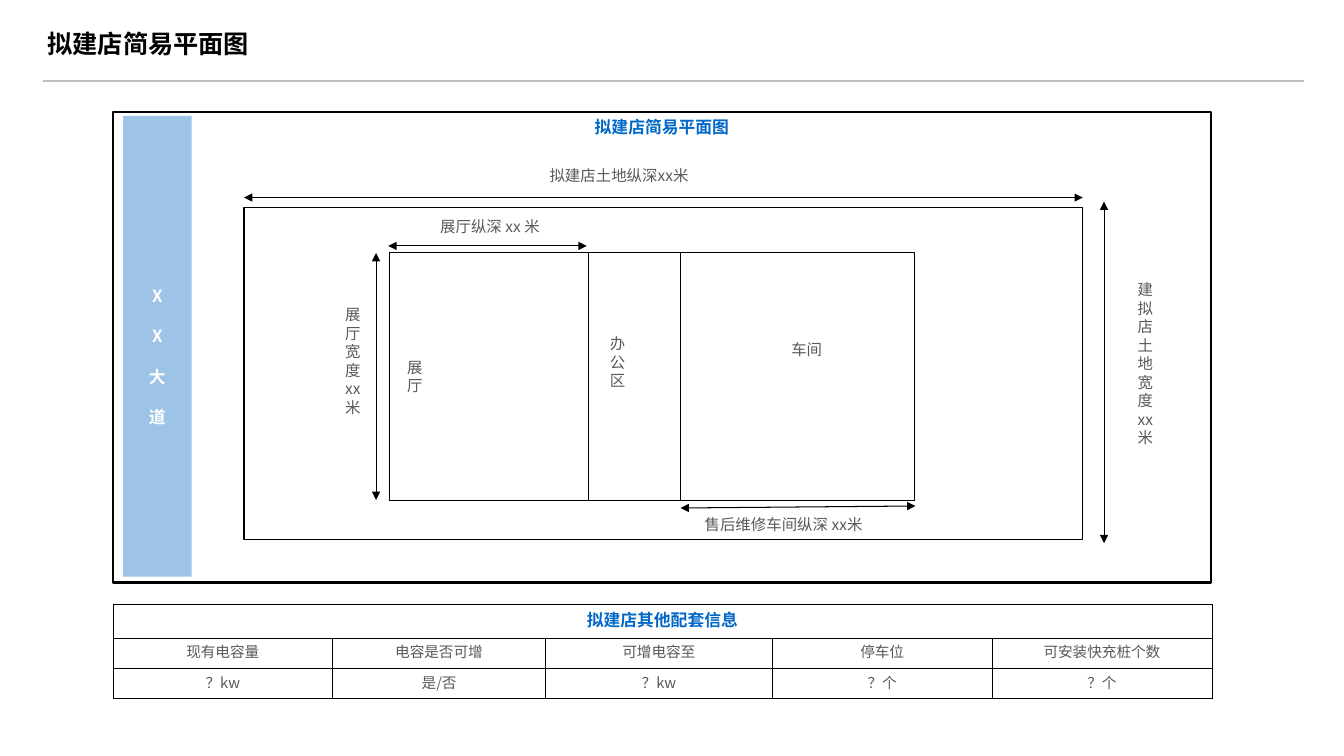
from lxml.etree import SubElement
from pptx import Presentation
from pptx.dml.color import RGBColor
from pptx.enum.shapes import MSO_CONNECTOR, MSO_SHAPE
from pptx.enum.text import MSO_ANCHOR, MSO_AUTO_SIZE, PP_ALIGN
from pptx.oxml.ns import qn
from pptx.util import Inches, Pt

FONT = "Noto Sans CJK SC"
BLACK = RGBColor(0x00, 0x00, 0x00)
WHITE = RGBColor(0xFF, 0xFF, 0xFF)
GREY = RGBColor(0x59, 0x59, 0x59)
RULE_GREY = RGBColor(0xBF, 0xBF, 0xBF)
BLUE = RGBColor(0x00, 0x69, 0xC8)
ROAD_BLUE = RGBColor(0x9D, 0xC3, 0xE6)

# Content: text, place (left, top, width, height), format
TITLE = "拟建店简易平面图"
TITLE_PLACE = (0.37, 0.23, 7.07, 0.4)
LABEL = {"size": Pt(11), "bold": False, "color": GREY}
HEADING = {"size": Pt(12), "bold": True, "color": BLUE}
ROAD_TEXT = {"size": Pt(12), "bold": True, "color": WHITE}
TABLE_TEXT = {"size": Pt(10.5), "bold": False, "color": GREY}
TITLE_TEXT = {"size": Pt(18), "bold": True, "color": BLACK}

PLAN = (1.12, 1.11, 10.89, 4.67)
ROAD = (1.22, 1.15, 0.68, 4.57)
ROOMS = [  # land, showroom with office, workshop
    (2.42, 2.06, 8.32, 3.29),
    (3.86, 2.51, 3.24, 2.46),
    (6.75, 2.51, 2.32, 2.46),
]
OFFICE_WALL = (5.84, 2.51, 5.84, 4.96)
CENTER, JUSTIFY = PP_ALIGN.CENTER, PP_ALIGN.JUSTIFY
LABELS = [  # lines, place, alignment, anchor, top inset
    (["拟建店土地纵深xx米"], (4.34, 1.6, 3.6, 0.3), CENTER, MSO_ANCHOR.TOP, 0.05),
    (["建拟店土地宽度xx", "米"], (11.12, 2.3, 0.48, 2.61), CENTER, MSO_ANCHOR.MIDDLE, 0.05),
    (["展厅宽度xx米"], (3.28, 2.98, 0.44, 1.51), CENTER, MSO_ANCHOR.TOP, 0.05),
    (["展厅纵深 xx 米"], (3.96, 2.11, 1.8, 0.33), CENTER, MSO_ANCHOR.TOP, 0.05),
    (["售后维修车间纵深 xx米"], (6.89, 5.06, 2.1, 0.41), JUSTIFY, MSO_ANCHOR.TOP, 0.05),
    (["办", "公", "区"], (5.95, 3.27, 0.77, 0.99), JUSTIFY, MSO_ANCHOR.TOP, 0.05),
    (["展", "厅"], (3.94, 3.5, 0.56, 0.65), JUSTIFY, MSO_ANCHOR.TOP, 0.05),
    (["车间"], (7.75, 3.14, 0.69, 1.03), JUSTIFY, MSO_ANCHOR.TOP, 0.23),
]
DIMENSIONS = [  # from x, y to x, y
    (2.42, 1.96, 10.74, 1.96),
    (10.95, 2, 10.95, 5.39),
    (3.73, 2.51, 3.73, 4.96),
    (3.85, 2.44, 5.82, 2.44),
    (6.75, 5.04, 9.08, 5.02),
]
TABLE_PLACE = (1.12, 6, 10.89, 0.92)
COLUMN_WIDTHS = [2.18, 2.11, 2.25, 2.18, 2.18]
ROW_HEIGHTS = [0.33, 0.3, 0.3]
TABLE_ROWS = [
    ["拟建店其他配套信息"],
    ["现有电容量", "电容是否可增", "可增电容至", "停车位", "可安装快充桩个数"],
    ["？kw", "是/否", "？kw", "？个", "？个"],
]


def inches(values):
    return [Inches(value) for value in values]


def write(frame, lines, style, align=CENTER, gap=0):
    for index, line in enumerate(lines):
        para = frame.paragraphs[0] if index == 0 else frame.add_paragraph()
        settings = {"alignment": align, "line_spacing": Pt(style["size"].pt * 1.2),
                    "space_before": Pt(gap if index else 0)}
        for name, value in settings.items():
            setattr(para, name, value)
        span = para.add_run()
        span.text = line
        for name in ("size", "bold"):
            setattr(span.font, name, style[name])
        span.font.name = FONT
        span.font.color.rgb = style["color"]
        SubElement(span.font._element, qn("a:ea"), typeface=FONT)


def add_box(page, place, fill=WHITE, line_width=None):
    box = page.shapes.add_shape(MSO_SHAPE.RECTANGLE, *inches(place))
    box.shadow.inherit = False
    box.fill.solid()
    box.fill.fore_color.rgb = fill
    if line_width:
        box.line.color.rgb = BLACK
        box.line.width = Pt(line_width)
    else:
        box.line.fill.background()
    set_frame(box.text_frame, MSO_ANCHOR.TOP)
    return box


def set_frame(frame, anchor, top=0.05):
    settings = {"word_wrap": True, "auto_size": MSO_AUTO_SIZE.NONE,
                "vertical_anchor": anchor, "margin_top": Inches(top)}
    for name, value in settings.items():
        setattr(frame, name, value)


def add_line(page, ends, color=BLACK, width=0.75, arrows=False):
    line = page.shapes.add_connector(MSO_CONNECTOR.STRAIGHT, *inches(ends))
    line.line.color.rgb = color
    line.line.width = Pt(width)
    if arrows:
        for tag in ("a:headEnd", "a:tailEnd"):
            SubElement(line.line._get_or_add_ln(), qn(tag), type="triangle")
    SubElement(line._element.spPr, qn("a:effectLst"))


def format_cell(cell):
    properties = cell._tc.get_or_add_tcPr()
    for side in ("a:lnL", "a:lnR", "a:lnT", "a:lnB"):
        border = SubElement(properties, qn(side), w=str(Pt(0.5)))
        fill = SubElement(border, qn("a:solidFill"))
        SubElement(fill, qn("a:srgbClr"), val=str(BLACK))
    cell.fill.solid()
    cell.fill.fore_color.rgb = WHITE
    cell.vertical_anchor = MSO_ANCHOR.MIDDLE
    cell.margin_top = cell.margin_bottom = Inches(0.03)


def add_facilities_table(page):
    frame = page.shapes.add_table(len(ROW_HEIGHTS), len(COLUMN_WIDTHS), *inches(TABLE_PLACE))
    table = frame.table
    table.first_row = table.horz_banding = False
    for column, width in zip(table.columns, COLUMN_WIDTHS):
        column.width = Inches(width)
    for row, height in zip(table.rows, ROW_HEIGHTS):
        row.height = Inches(height)
    for cell in table.iter_cells():
        format_cell(cell)
    table.cell(0, 0).merge(table.cell(0, len(COLUMN_WIDTHS) - 1))
    for row, texts in enumerate(TABLE_ROWS):
        for column, text in enumerate(texts):
            style = TABLE_TEXT if row else HEADING
            write(table.cell(row, column).text_frame, [text], style)


def main():
    deck = Presentation()
    deck.slide_width, deck.slide_height = inches((13.33, 7.5))
    page = deck.slides.add_slide(deck.slide_layouts[5])

    # Title and rule
    title = page.shapes.title
    for name, value in zip(("left", "top", "width", "height"), inches(TITLE_PLACE)):
        setattr(title, name, value)
    set_frame(title.text_frame, MSO_ANCHOR.MIDDLE)
    write(title.text_frame, [TITLE], TITLE_TEXT, PP_ALIGN.LEFT)
    add_line(page, (0.43, 0.8, 12.93, 0.8), RULE_GREY, 1.5)

    # Plan frame and road
    plan = add_box(page, PLAN, line_width=1.5)
    write(plan.text_frame, [TITLE], HEADING)
    road = add_box(page, ROAD, ROAD_BLUE)
    set_frame(road.text_frame, MSO_ANCHOR.MIDDLE, 0.25)
    write(road.text_frame, list("XX大道"), ROAD_TEXT, gap=14.4)

    # Land and rooms
    for place in ROOMS:
        add_box(page, place, line_width=0.75)
    add_line(page, OFFICE_WALL)

    # Labels and dimension arrows
    for lines, place, align, anchor, top in LABELS:
        label = add_box(page, place)
        label.fill.background()
        set_frame(label.text_frame, anchor, top)
        write(label.text_frame, lines, LABEL, align)
    for ends in DIMENSIONS:
        add_line(page, ends, arrows=True)

    add_facilities_table(page)
    deck.save("out.pptx")


if __name__ == "__main__":
    main()
